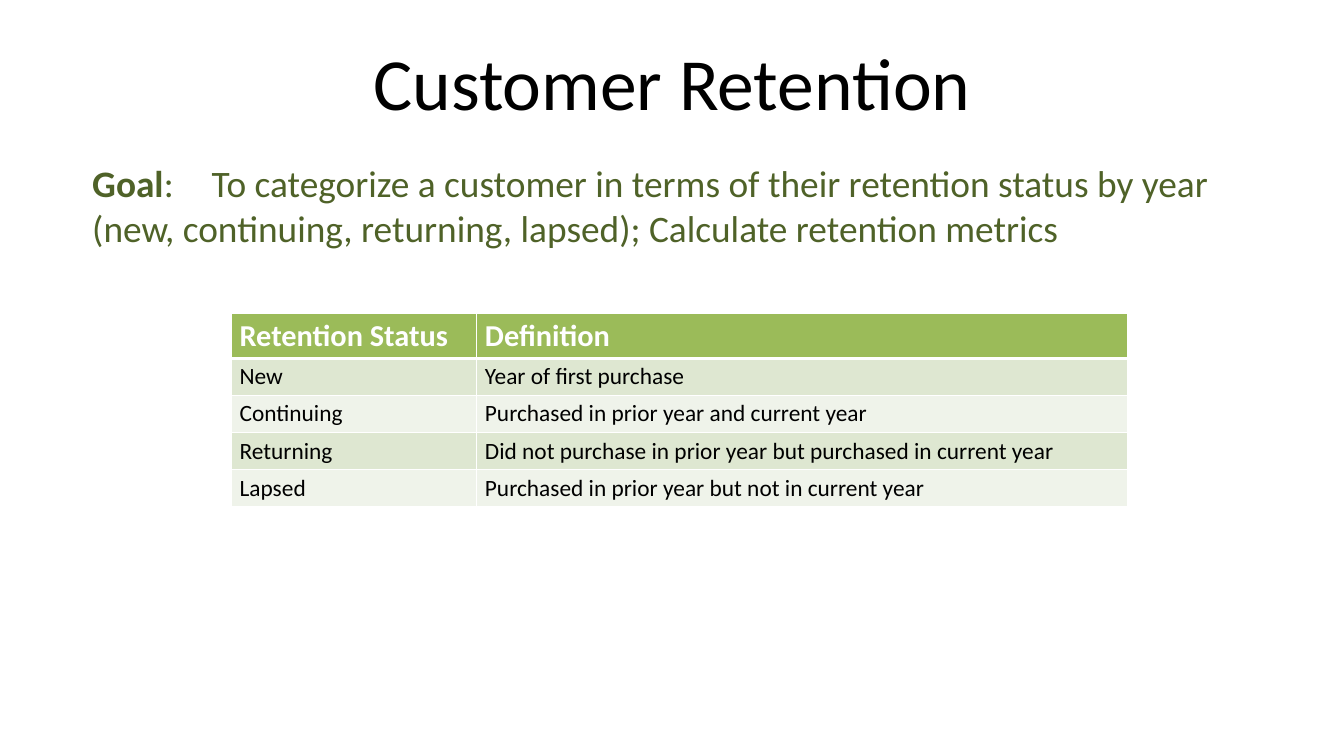
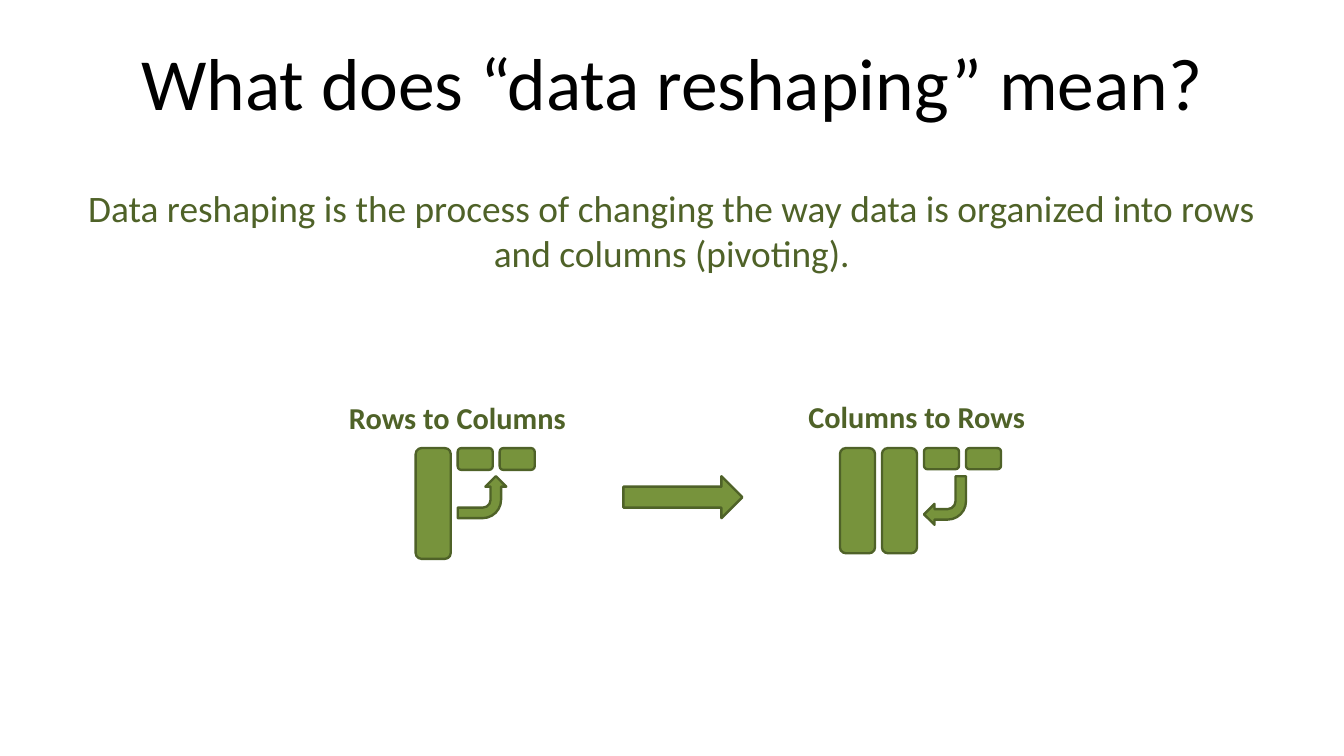
from dataclasses import dataclass

from lxml import etree
from pptx import Presentation
from pptx.dml.color import RGBColor
from pptx.enum.shapes import MSO_SHAPE
from pptx.enum.text import MSO_ANCHOR, MSO_AUTO_SIZE, PP_ALIGN
from pptx.oxml.ns import qn
from pptx.presentation import Presentation as Deck
from pptx.slide import Slide
from pptx.table import _Cell
from pptx.text.text import TextFrame
from pptx.util import Cm, Pt

ROUND_RECT = MSO_SHAPE.ROUNDED_RECTANGLE
BENT_ARROW = MSO_SHAPE.BENT_ARROW
RIGHT_ARROW = MSO_SHAPE.RIGHT_ARROW
LEFT, CENTER = PP_ALIGN.LEFT, PP_ALIGN.CENTER
MIDDLE = MSO_ANCHOR.MIDDLE
NO_FIT = MSO_AUTO_SIZE.NONE
TITLE_ONLY = 5


@dataclass(frozen=True)
class Theme:
    font: str = "Calibri"
    black: str = "000000"
    white: str = "FFFFFF"
    dark_green: str = "4F6228"
    green: str = "77933C"
    header: str = "9BBB59"
    bands: tuple[str, str] = ("DEE7D1", "EFF3EA")
    title: int = 63
    body: int = 32
    label: int = 26
    cell: int = 20


@dataclass(frozen=True)
class Box:
    left: float
    top: float
    width: float
    height: float

    def emu(self) -> tuple[Cm, Cm, Cm, Cm]:
        return Cm(self.left), Cm(self.top), Cm(self.width), Cm(self.height)


@dataclass(frozen=True)
class Run:
    text: str
    size: int
    color: str
    bold: bool = False


@dataclass(frozen=True)
class Arrow:
    kind: MSO_SHAPE
    box: Box
    rotation: int = 0
    flip: bool = False
    bend: float | None = None


@dataclass(frozen=True)
class Icon:
    label: str
    label_box: Box
    left: float
    columns: int
    column_height: float
    row_height: float
    arrow: Arrow


THEME = Theme()
TITLE_BOX = Box(2.03, 0.91, 36.58, 3.1)
GOAL_BOX = Box(2.54, 4.72, 36.58, 2.9)
GOAL_TAB = 3.61
MEANING_BOX = Box(2.03, 5.49, 36.58, 3)
TABLE_BOX = Box(6.99, 9.47, 27.1, 5.85)
COLUMN_WIDTHS = (7.42, 19.68)
HEADER_HEIGHT, ROW_HEIGHT = 1.37, 1.12
ICON_TOP, BAR_WIDTH, BAR_STEP = 13.55, 1.06, 1.27

STATUSES = (
    ("Retention Status", "Definition"),
    ("New", "Year of first purchase"),
    ("Continuing", "Purchased in prior year and current year"),
    ("Returning", "Did not purchase in prior year but purchased in current year"),
    ("Lapsed", "Purchased in prior year but not in current year"),
)
ICONS = (
    Icon("Columns to Rows", Box(24.13, 11.91, 7.19, 1.37), 25.4, 2, 3.18, 0.64,
         Arrow(BENT_ARROW, Box(27.94, 14.4, 1.27, 1.47), 180)),
    Icon("Rows to Columns", Box(10.24, 11.94, 7.19, 1.37), 12.57, 1, 3.35, 0.66,
         Arrow(BENT_ARROW, Box(13.94, 14.3, 1.27, 1.47), 270, True, 0.44)),
)
MIDDLE_ARROW = Arrow(RIGHT_ARROW, Box(18.85, 14.4, 3.6, 1.27))


def rgb(color: str) -> RGBColor:
    return RGBColor.from_string(color)


def write(tf: TextFrame, runs: tuple[Run, ...], align: PP_ALIGN = LEFT) -> None:
    p = tf.paragraphs[0]
    p.alignment = align
    for run in runs:
        r = p.add_run()
        r.text = run.text
        r.font.name = THEME.font
        r.font.size = Pt(run.size)
        r.font.bold = run.bold
        r.font.color.rgb = rgb(run.color)


def add_text(s: Slide, box: Box, runs: tuple[Run, ...], align: PP_ALIGN = LEFT) -> TextFrame:
    tf = s.shapes.add_textbox(*box.emu()).text_frame
    tf.word_wrap = True
    write(tf, runs, align)
    return tf


def add_slide(prs: Deck, title: str) -> Slide:
    s = prs.slides.add_slide(prs.slide_layouts[TITLE_ONLY])
    sp = s.shapes.title
    sp.left, sp.top, sp.width, sp.height = TITLE_BOX.emu()
    tf = sp.text_frame
    tf.auto_size = NO_FIT
    tf.vertical_anchor = MIDDLE
    write(tf, (Run(title, THEME.title, THEME.black),), CENTER)
    return s


def set_tab(tf: TextFrame, position: float) -> None:
    pPr = tf.paragraphs[0]._p.get_or_add_pPr()
    tabs = etree.SubElement(pPr, qn("a:tabLst"))
    etree.SubElement(tabs, qn("a:tab"), pos=str(Cm(position)), algn="l")


def set_borders(cell: _Cell, top: int, bottom: int) -> None:
    tcPr = cell._tc.get_or_add_tcPr()
    for side, width in (("L", 1), ("R", 1), ("T", top), ("B", bottom)):
        ln = etree.SubElement(tcPr, qn(f"a:ln{side}"), w=str(Pt(width)))
        fill = etree.SubElement(ln, qn("a:solidFill"))
        etree.SubElement(fill, qn("a:srgbClr"), val=THEME.white)


def add_status_table(s: Slide) -> None:
    table = s.shapes.add_table(len(STATUSES), len(COLUMN_WIDTHS), *TABLE_BOX.emu()).table
    for column, width in zip(table.columns, COLUMN_WIDTHS):
        column.width = Cm(width)
    for i, texts in enumerate(STATUSES):
        head = i == 0
        table.rows[i].height = Cm(HEADER_HEIGHT if head else ROW_HEIGHT)
        size, color = (THEME.label, THEME.white) if head else (THEME.cell, THEME.black)
        for j, text in enumerate(texts):
            cell = table.cell(i, j)
            set_borders(cell, 3 if i == 1 else 1, 3 if head else 1)
            cell.fill.solid()
            cell.fill.fore_color.rgb = rgb(THEME.header if head else THEME.bands[(i - 1) % 2])
            write(cell.text_frame, (Run(text, size, color, head),))


def add_green_shape(s: Slide, arrow: Arrow) -> None:
    sp = s.shapes.add_shape(arrow.kind, *arrow.box.emu())
    sp.shadow.inherit = False
    sp.fill.solid()
    sp.fill.fore_color.rgb = rgb(THEME.green)
    sp.line.color.rgb = rgb(THEME.dark_green)
    sp.line.width = Pt(2)
    sp.rotation = arrow.rotation
    if arrow.flip:
        sp._element.spPr.find(qn("a:xfrm")).set("flipV", "1")
    if arrow.bend is not None:
        sp.adjustments[3] = arrow.bend


def add_icon(s: Slide, icon: Icon) -> None:
    heights = [icon.column_height] * icon.columns + [icon.row_height] * 2
    for i, height in enumerate(heights):
        box = Box(icon.left + i * BAR_STEP, ICON_TOP, BAR_WIDTH, height)
        add_green_shape(s, Arrow(ROUND_RECT, box))
    add_green_shape(s, icon.arrow)
    add_text(s, icon.label_box, (Run(icon.label, THEME.label, THEME.dark_green, True),), CENTER)


def build_retention(prs: Deck) -> None:
    s = add_slide(prs, "Customer Retention")
    goal = (
        Run("Goal", THEME.body, THEME.dark_green, True),
        Run(": \tTo categorize a customer in terms of their retention status by year "
            "\t(new, continuing, returning, lapsed); Calculate retention metrics",
            THEME.body, THEME.dark_green),
    )
    set_tab(add_text(s, GOAL_BOX, goal), GOAL_TAB)
    add_status_table(s)


def build_reshaping(prs: Deck) -> None:
    s = add_slide(prs, "What does “data reshaping” mean?")
    meaning = Run("Data reshaping is the process of changing the way data is organized "
                  "into rows and columns (pivoting).", THEME.body, THEME.dark_green)
    add_text(s, MEANING_BOX, (meaning,), CENTER)
    for icon in ICONS:
        add_icon(s, icon)
    add_green_shape(s, MIDDLE_ARROW)


def main() -> None:
    prs = Presentation()
    prs.slide_width, prs.slide_height = Cm(40.64), Cm(22.86)
    build_retention(prs)
    build_reshaping(prs)
    prs.save("out.pptx")


if __name__ == "__main__":
    main()
